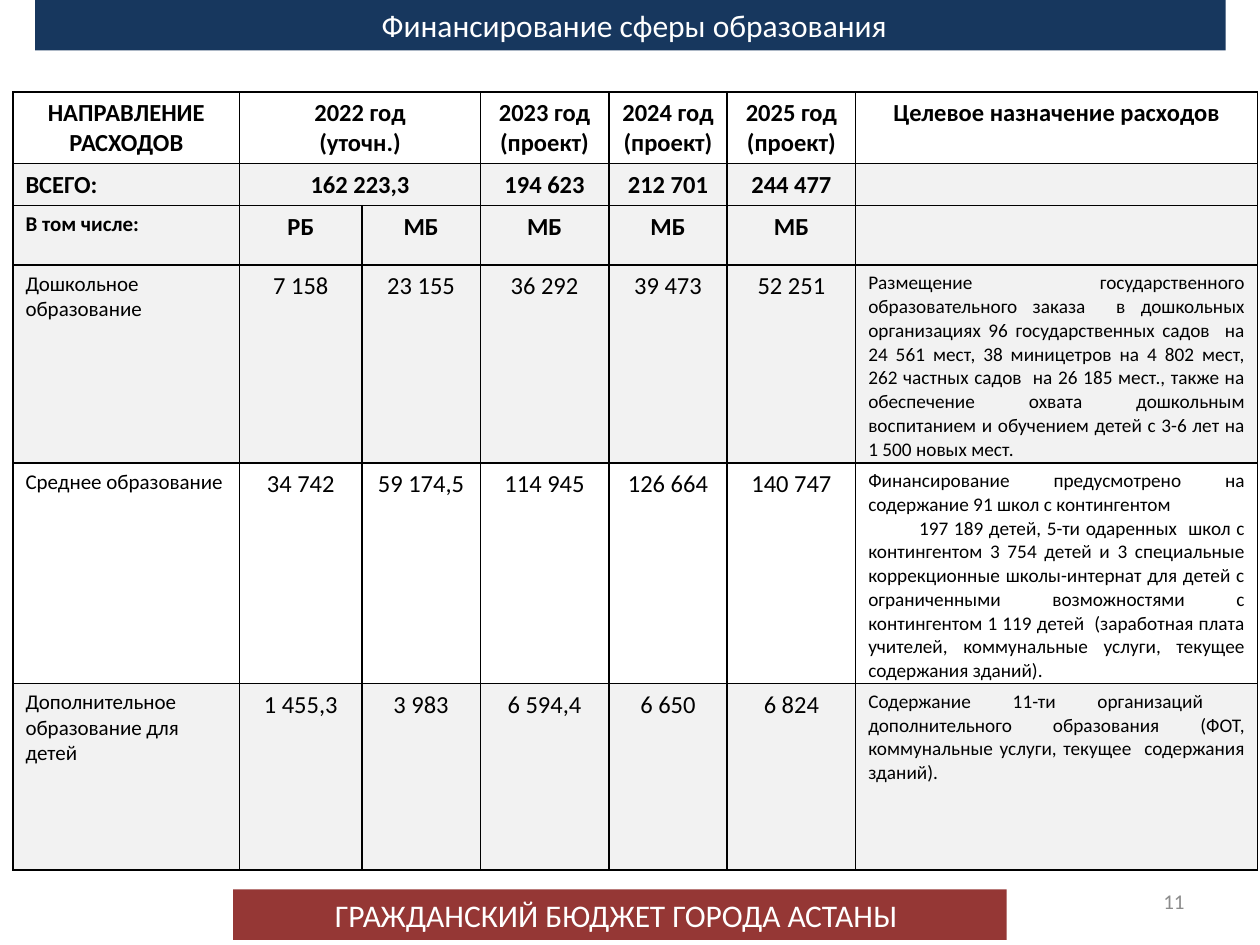
import lxml.etree
import pptx
import pptx.dml.color
import pptx.enum.shapes
import pptx.enum.text
import pptx.oxml.ns
import pptx.util

Pt = pptx.util.Pt
qn = pptx.oxml.ns.qn
ALIGN = pptx.enum.text.PP_ALIGN
ANCHOR = pptx.enum.text.MSO_ANCHOR

# Content: lines of a cell are separated by "\n"
TITLE = "Финансирование сферы образования"
FOOTER = "ГРАЖДАНСКИЙ БЮДЖЕТ ГОРОДА АСТАНЫ"
PAGE = "11"
PRESCHOOL = (
    "Размещение государственного образовательного заказа  в дошкольных "
    "организациях 96 государственных садов  на 24 561 мест, 38 миницетров на "
    "4 802 мест, 262 частных садов  на 26 185 мест., также на обеспечение охвата "
    "дошкольным воспитанием и обучением детей с 3-6 лет на 1 500 новых мест.")
SECONDARY = (
    "Финансирование предусмотрено на содержание 91 школ с контингентом\n"
    "197 189 детей, 5-ти одаренных  школ с контингентом 3 754 детей и "
    "3 специальные коррекционные школы-интернат для детей с ограниченными "
    "возможностями с контингентом 1 119 детей  (заработная плата учителей, "
    "коммунальные услуги, текущее содержания зданий).")
EXTRA = (
    "Содержание 11-ти организаций  дополнительного образования (ФОТ, "
    "коммунальные услуги, текущее  содержания зданий).")
ROWS = [
    ["НАПРАВЛЕНИЕ РАСХОДОВ", "2022 год\n(уточн.)", None, "2023 год (проект)",
     "2024 год (проект)", "2025 год\n(проект)", "Целевое назначение расходов"],
    ["ВСЕГО:", "162 223,3", None, "194 623", "212 701", "244 477", ""],
    ["В том числе:", "РБ", "МБ", "МБ", "МБ", "МБ", ""],
    ["Дошкольное образование", "7 158", "23 155", "36 292", "39 473", "52 251", PRESCHOOL],
    ["Среднее образование", "34 742", "59 174,5", "114 945", "126 664", "140 747", SECONDARY],
    ["Дополнительное образование для детей", "1 455,3", "3 983", "6 594,4", "6 650",
     "6 824", EXTRA],
]
COL_WIDTHS = [129.6, 69.8, 67.7, 73.4, 67.7, 73.4, 229.7]
ROW_HEIGHTS = [39, 23, 34, 113, 125, 106.6]
HEADER_ROWS = 3
WHITE_ROWS = (0, 4)


def color(value):
    return pptx.dml.color.RGBColor.from_string(value)


def add_run(p, text, size, font_color, bold=False):
    r = p.add_run()
    r.text = text
    r.font.name = "Calibri"
    r.font.size = Pt(size)
    r.font.bold = bold
    r.font.color.rgb = color(font_color)


def add_bar(s, x, y, w, h, fill):
    sp = s.shapes.add_shape(pptx.enum.shapes.MSO_SHAPE.RECTANGLE, Pt(x), Pt(y), Pt(w), Pt(h))
    sp.shadow.inherit = False
    sp.fill.solid()
    sp.fill.fore_color.rgb = color(fill)
    sp.line.fill.background()


def add_text(s, x, y, w, h, text, size, font_color, align, anchor=ANCHOR.TOP):
    tf = s.shapes.add_textbox(Pt(x), Pt(y), Pt(w), Pt(h)).text_frame
    tf.word_wrap = True
    tf.vertical_anchor = anchor
    p = tf.paragraphs[0]
    p.alignment = align
    add_run(p, text, size, font_color)


def set_borders(cell):
    tc_pr = cell._tc.get_or_add_tcPr()
    for side in ("lnL", "lnR", "lnT", "lnB"):
        ln = lxml.etree.SubElement(tc_pr, qn("a:" + side), w=str(Pt(1)))
        fill = lxml.etree.SubElement(ln, qn("a:solidFill"))
        lxml.etree.SubElement(fill, qn("a:srgbClr"), val="000000")


def cell_style(row, col):
    """Return size, boldness and alignment by place in the table."""
    bold = row < HEADER_ROWS
    if col == 0:
        return 14 if row < 2 else 12, bold, ALIGN.LEFT if row else ALIGN.CENTER
    if col == 6 and not bold:
        return 11, bold, ALIGN.JUSTIFY
    return 14, bold, ALIGN.CENTER


def fill_cell(cell, text, row, col):
    set_borders(cell)
    if row in WHITE_ROWS:
        cell.fill.background()
    else:
        cell.fill.solid()
        cell.fill.fore_color.rgb = color("F2F2F2")
    size, bold, align = cell_style(row, col)
    tf = cell.text_frame
    for i, line in enumerate((text or "").split("\n")):
        p = tf.add_paragraph() if i else tf.paragraphs[0]
        p.alignment = align
        if line:
            add_run(p, line, size, "000000", bold)
        else:
            lxml.etree.SubElement(p._p, qn("a:endParaRPr"), sz=str(size * 100))
        if i and align == ALIGN.JUSTIFY:
            p._p.get_or_add_pPr().set("indent", str(Pt(29)))


prs = pptx.Presentation()
prs.slide_width, prs.slide_height = Pt(720), Pt(540)
s = prs.slides.add_slide(prs.slide_layouts[6])

# Footer and title banners
add_bar(s, 133.2, 508.3, 442, 28.8, "953735")
add_text(s, 184.3, 508.3, 368.6, 28.8, FOOTER, 18, "FFFFFF", ALIGN.JUSTIFY)
add_bar(s, 20, 0, 680.4, 28.8, "17375E")
add_text(s, 73.4, 0, 578.2, 51, TITLE, 18, "FFFFFF", ALIGN.CENTER)

# Budget table
table = s.shapes.add_table(len(ROWS), len(COL_WIDTHS), Pt(7.4), Pt(52.6),
                           Pt(sum(COL_WIDTHS)), Pt(sum(ROW_HEIGHTS))).table
table.first_row = table.horz_banding = False
for column, width in zip(table.columns, COL_WIDTHS):
    column.width = Pt(width)
for i, (values, height) in enumerate(zip(ROWS, ROW_HEIGHTS)):
    table.rows[i].height = Pt(height)
    for j, value in enumerate(values):
        fill_cell(table.cell(i, j), value, i, j)
        if value is None:
            table.cell(i, j - 1).merge(table.cell(i, j))

# Page number
add_text(s, 516.2, 500.4, 167.8, 28.8, PAGE, 12, "8C8C8C", ALIGN.RIGHT, ANCHOR.MIDDLE)

prs.save("out.pptx")
